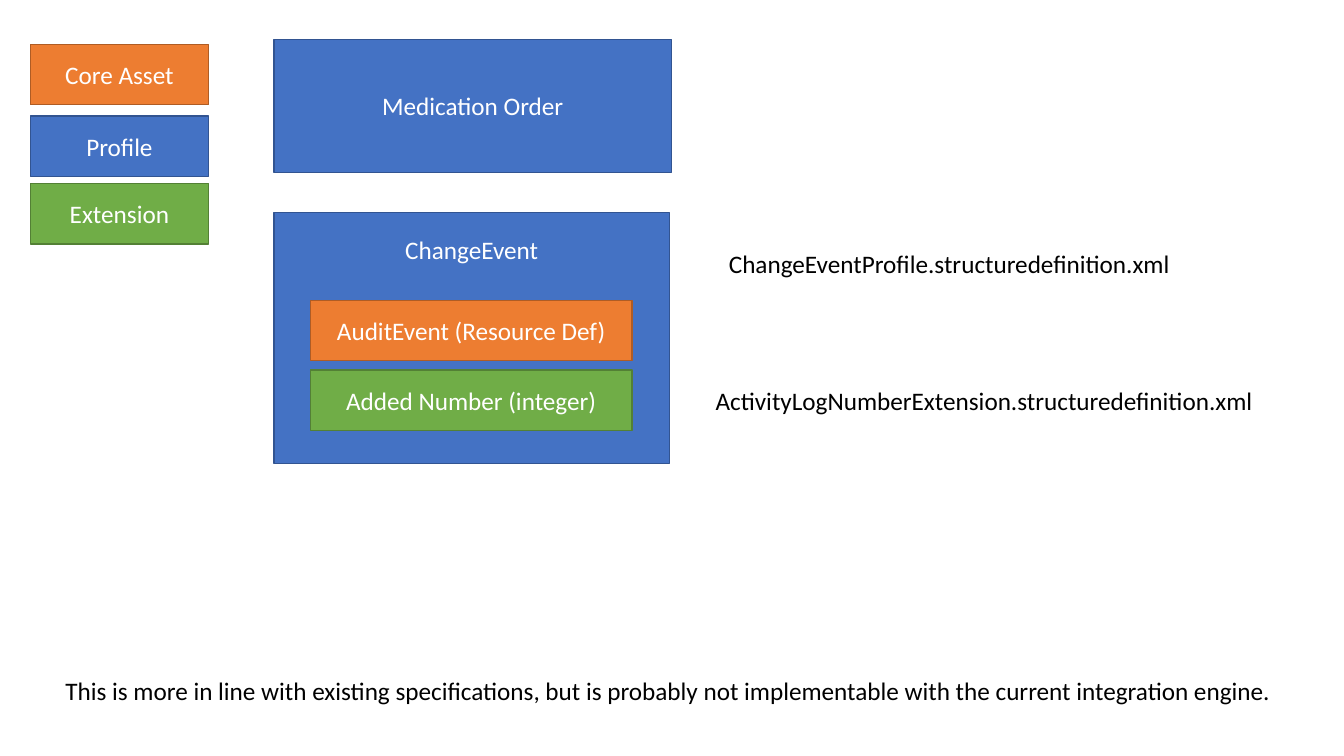
from dataclasses import dataclass

from pptx import Presentation
from pptx.dml.color import RGBColor
from pptx.enum.shapes import MSO_SHAPE
from pptx.enum.text import MSO_ANCHOR, MSO_AUTO_SIZE, PP_ALIGN
from pptx.slide import Slide
from pptx.text.text import TextFrame
from pptx.util import Inches, Length, Pt

SLIDE_WIDTH = Inches(13.33)
SLIDE_HEIGHT = Inches(7.5)
COLORS = {
    "profile": "4472C4",
    "profile_edge": "325491",
    "extension": "70AD47",
    "extension_edge": "538035",
    "core": "ED7D31",
    "core_edge": "AF5C24",
    "light": "FFFFFF",
    "dark": "000000",
}


@dataclass(frozen=True)
class Area:
    left: float
    top: float
    width: float
    height: float

    def lengths(self) -> tuple[Length, Length, Length, Length]:
        return (
            across(self.left),
            down(self.top),
            across(self.width),
            down(self.height),
        )


@dataclass(frozen=True)
class Block:
    label: str
    role: str
    area: Area
    heading_inset: float | None = None


@dataclass(frozen=True)
class Note:
    wording: str
    area: Area


def across(percent: float) -> Length:
    return Length(round(SLIDE_WIDTH * percent / 100))


def down(percent: float) -> Length:
    return Length(round(SLIDE_HEIGHT * percent / 100))


def color(key: str) -> RGBColor:
    return RGBColor.from_string(COLORS[key])


def write(frame: TextFrame, wording: str, ink: str, alignment: PP_ALIGN) -> None:
    frame.text = wording
    paragraph = frame.paragraphs[0]
    paragraph.alignment = alignment
    font = paragraph.runs[0].font
    font.name = "Calibri"
    font.size = Pt(18)
    font.color.rgb = color(ink)


def draw_block(slide: Slide, block: Block) -> None:
    panel = slide.shapes.add_shape(MSO_SHAPE.RECTANGLE, *block.area.lengths())
    panel.shadow.inherit = False
    panel.fill.solid()
    panel.fill.fore_color.rgb = color(block.role)
    panel.line.color.rgb = color(f"{block.role}_edge")
    panel.line.width = Pt(1)
    frame = panel.text_frame
    frame.word_wrap = True
    frame.vertical_anchor = MSO_ANCHOR.MIDDLE
    if block.heading_inset is not None:
        frame.vertical_anchor = MSO_ANCHOR.TOP
        frame.margin_top = down(block.heading_inset)
    write(frame, block.label, "light", PP_ALIGN.CENTER)


def draw_note(slide: Slide, note: Note) -> None:
    frame = slide.shapes.add_textbox(*note.area.lengths()).text_frame
    frame.word_wrap = False
    frame.auto_size = MSO_AUTO_SIZE.SHAPE_TO_FIT_TEXT
    write(frame, note.wording, "dark", PP_ALIGN.LEFT)


def legend_area(top: float) -> Area:
    return Area(2.25, top, 13.28, 8)


def part_area(top: float) -> Area:
    return Area(23.1, top, 23.93, 8)


BLOCKS = [
    Block("Medication Order", "profile", Area(20.4, 5.2, 29.55, 17.6)),
    Block("ChangeEvent", "profile", Area(20.4, 28.13, 29.4, 33.2), 2.8),
    Block("Added Number (integer)", "extension", part_area(48.93)),
    Block("AuditEvent (Resource Def)", "core", part_area(39.73)),
    Block("Extension", "extension", legend_area(24.27)),
    Block("Core Asset", "core", legend_area(5.87)),
    Block("Profile", "profile", legend_area(15.33)),
]
NOTES = [
    Note(
        "ActivityLogNumberExtension.structuredefinition.xml",
        Area(52.51, 50.27, 41.94, 5.33),
    ),
    Note(
        "ChangeEventProfile.structuredefinition.xml",
        Area(53.49, 32.13, 34.66, 5.33),
    ),
    Note(
        "This is more in line with existing specifications, but is probably "
        "not implementable with the current integration engine.",
        Area(4.13, 88.67, 91.9, 5.33),
    ),
]


def main() -> None:
    deck = Presentation()
    deck.slide_width = SLIDE_WIDTH
    deck.slide_height = SLIDE_HEIGHT
    slide = deck.slides.add_slide(deck.slide_layouts[6])
    for block in BLOCKS:
        draw_block(slide, block)
    for note in NOTES:
        draw_note(slide, note)
    deck.save("out.pptx")


if __name__ == "__main__":
    main()
